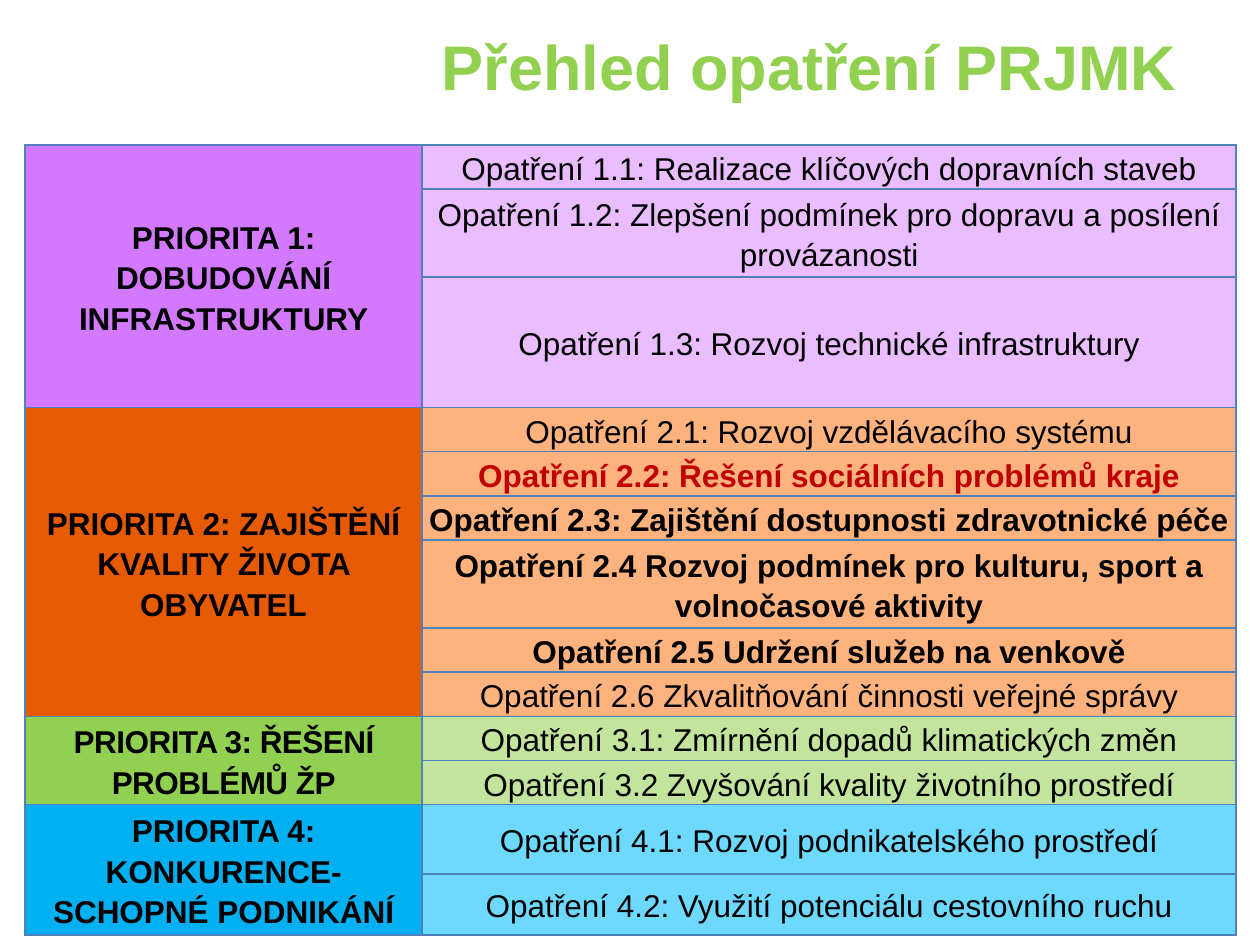
import pptx
import pptx.dml.color
import pptx.enum.text
import pptx.oxml
import pptx.oxml.ns
import pptx.util
from pptx.util import Inches

RGBColor = pptx.dml.color.RGBColor
BLACK = RGBColor(0x00, 0x00, 0x00)
RED = RGBColor(0xC0, 0x00, 0x00)
TITLE_GREEN = RGBColor(0x92, 0xD0, 0x50)
PURPLE = RGBColor(0xD2, 0x79, 0xFF)
LIGHT_PURPLE = RGBColor(0xE9, 0xBD, 0xFF)
ORANGE = RGBColor(0xE6, 0x5B, 0x01)
LIGHT_ORANGE = RGBColor(0xFE, 0xB2, 0x7E)
GREEN = RGBColor(0x92, 0xD0, 0x51)
LIGHT_GREEN = RGBColor(0xC2, 0xE4, 0x9C)
BLUE = RGBColor(0x00, 0xB0, 0xF1)
LIGHT_BLUE = RGBColor(0x6D, 0xD9, 0xFF)
BORDER_BLUE = RGBColor(0x4F, 0x81, 0xBD)

COLUMN_WIDTHS = (3.15, 6.46)
SINGLE, DOUBLE = 0.35, 0.7

# Each measure: text, row height, bold, colour.
PRIORITIES = [
    ("PRIORITA 1: DOBUDOVÁNÍ INFRASTRUKTURY", 0, PURPLE, LIGHT_PURPLE, [
        ("Opatření 1.1: Realizace klíčových dopravních staveb", SINGLE, False, BLACK),
        ("Opatření 1.2: Zlepšení podmínek pro dopravu a posílení provázanosti",
         DOUBLE, False, BLACK),
        ("Opatření 1.3: Rozvoj technické infrastruktury", 0.97, False, BLACK),
    ]),
    ("PRIORITA 2: ZAJIŠTĚNÍ KVALITY ŽIVOTA OBYVATEL", 0, ORANGE, LIGHT_ORANGE, [
        ("Opatření 2.1: Rozvoj vzdělávacího systému", SINGLE, False, BLACK),
        ("Opatření 2.2: Řešení sociálních problémů kraje", SINGLE, True, RED),
        ("Opatření 2.3: Zajištění dostupnosti zdravotnické péče", SINGLE, True, BLACK),
        ("Opatření 2.4 Rozvoj podmínek pro kulturu, sport a volnočasové aktivity",
         DOUBLE, True, BLACK),
        ("Opatření 2.5 Udržení služeb na venkově", SINGLE, True, BLACK),
        ("Opatření 2.6 Zkvalitňování činnosti veřejné správy", SINGLE, False, BLACK),
    ]),
    ("PRIORITA 3: ŘEŠENÍ PROBLÉMŮ ŽP", -0.3, GREEN, LIGHT_GREEN, [
        ("Opatření 3.1: Zmírnění dopadů klimatických změn", SINGLE, False, BLACK),
        ("Opatření 3.2 Zvyšování kvality životního prostředí", SINGLE, False, BLACK),
    ]),
    ("PRIORITA 4: KONKURENCE-SCHOPNÉ PODNIKÁNÍ", 0, BLUE, LIGHT_BLUE, [
        ("Opatření 4.1: Rozvoj podnikatelského prostředí", 0.55, False, BLACK),
        ("Opatření 4.2: Využití potenciálu cestovního ruchu", 0.42, False, BLACK),
    ]),
]


def write_run(paragraph, text, size, bold, color, tracking=0):
    paragraph.alignment = pptx.enum.text.PP_ALIGN.CENTER
    run = paragraph.add_run()
    run.text = text
    run.font.name = "Arial"
    run.font.size = pptx.util.Pt(size)
    run.font.bold = bold
    run.font.color.rgb = color
    if tracking:
        run.font._element.set("spc", str(round(tracking * 100)))


def add_title(slide):
    title = slide.shapes.add_textbox(Inches(3.27), Inches(0.21), Inches(6.31), Inches(0.62))
    frame = title.text_frame
    frame.word_wrap = True
    frame.vertical_anchor = pptx.enum.text.MSO_ANCHOR.MIDDLE
    write_run(frame.paragraphs[0], "Přehled opatření PRJMK", 36, True, TITLE_GREEN)


def style_cell(cell, fill):
    cell.margin_left = cell.margin_right = Inches(0.05)
    cell.margin_top = cell.margin_bottom = 0
    cell.vertical_anchor = pptx.enum.text.MSO_ANCHOR.MIDDLE
    properties = cell._tc.get_or_add_tcPr()
    for side in ("lnL", "lnR", "lnT", "lnB"):
        properties.append(pptx.oxml.parse_xml(
            f'<a:{side} {pptx.oxml.ns.nsdecls("a")} w="{pptx.util.Pt(1)}">'
            f'<a:solidFill><a:srgbClr val="{BORDER_BLUE}"/></a:solidFill></a:{side}>'))
    cell.fill.solid()
    cell.fill.fore_color.rgb = fill


def write_cell(cell, text, bold, color, tracking=0):
    paragraph = cell.text_frame.paragraphs[0]
    paragraph.line_spacing = 1.15
    paragraph.space_before = paragraph.space_after = pptx.util.Pt(1)
    write_run(paragraph, text, 18, bold, color, tracking)


def add_priority(table, first_row, priority):
    heading, tracking, dark, light, measures = priority
    for row, (text, height, bold, color) in enumerate(measures, first_row):
        table.rows[row].height = Inches(height)
        style_cell(table.cell(row, 0), dark)
        style_cell(table.cell(row, 1), light)
        write_cell(table.cell(row, 1), text, bold, color)
    heading_cell = table.cell(first_row, 0)
    heading_cell.merge(table.cell(first_row + len(measures) - 1, 0))
    write_cell(heading_cell, heading, True, BLACK, tracking)


def add_overview(slide):
    heights = [measure[1] for priority in PRIORITIES for measure in priority[-1]]
    table = slide.shapes.add_table(
        len(heights), len(COLUMN_WIDTHS), Inches(0.2), Inches(1.15),
        Inches(sum(COLUMN_WIDTHS)), Inches(sum(heights))).table
    for column, width in zip(table.columns, COLUMN_WIDTHS):
        column.width = Inches(width)
    first_row = 0
    for priority in PRIORITIES:
        add_priority(table, first_row, priority)
        first_row += len(priority[-1])


def main():
    presentation = pptx.Presentation()
    presentation.slide_width = Inches(10)
    presentation.slide_height = Inches(7.5)
    slide = presentation.slides.add_slide(presentation.slide_layouts[6])
    add_title(slide)
    add_overview(slide)
    presentation.save("out.pptx")


if __name__ == "__main__":
    main()
